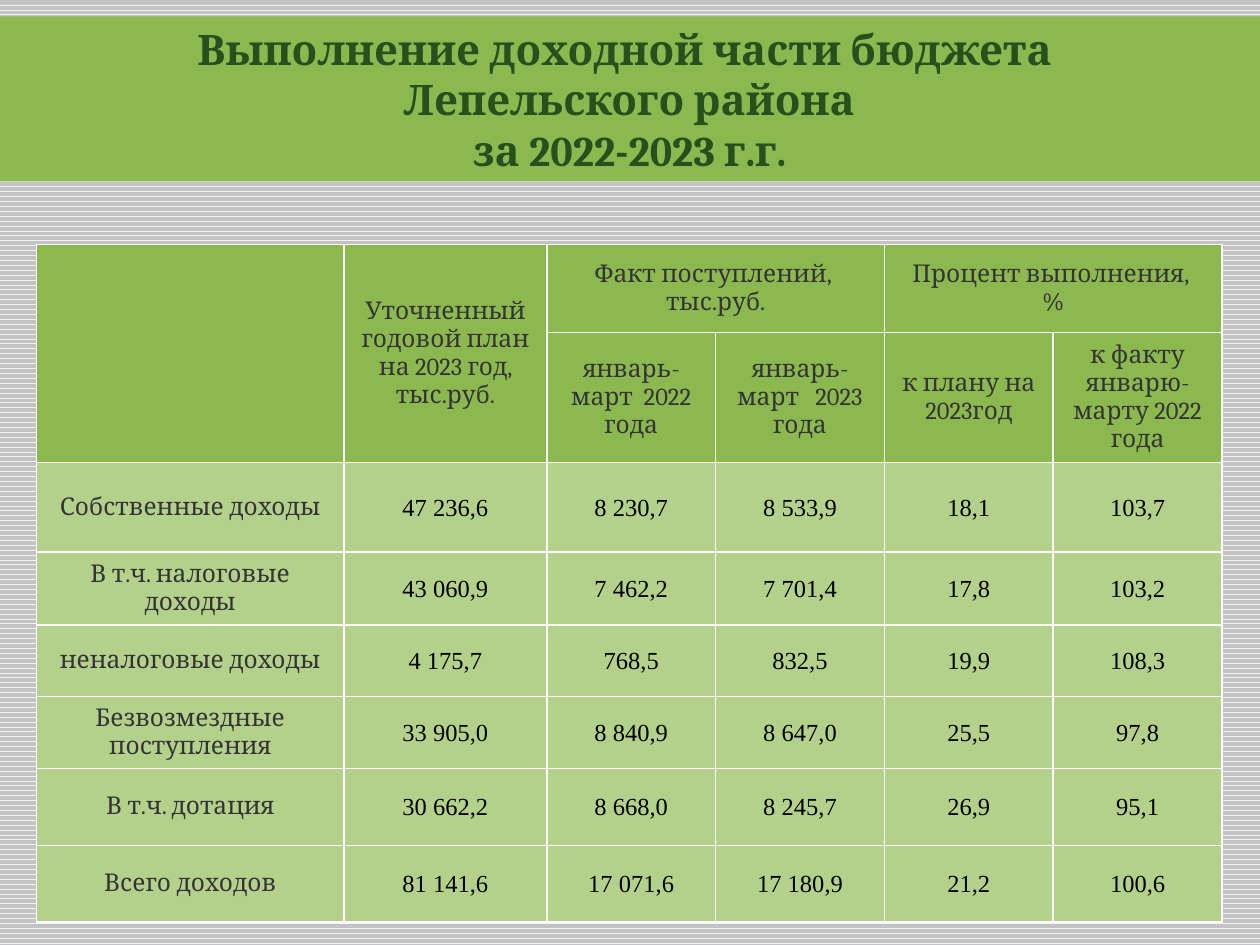
from dataclasses import dataclass

from lxml import etree
from pptx import Presentation
from pptx.dml.color import RGBColor
from pptx.enum.dml import MSO_PATTERN
from pptx.enum.text import MSO_ANCHOR, MSO_AUTO_SIZE, PP_ALIGN
from pptx.oxml.ns import qn
from pptx.util import Inches, Pt

MIDDLE = MSO_ANCHOR.MIDDLE
CENTER = PP_ALIGN.CENTER
FIXED = MSO_AUTO_SIZE.NONE
WAVE = MSO_PATTERN.WAVE

GREEN, LIGHT, WHITE = "8CB94F", "B3D18B", "FFFFFF"


@dataclass(frozen=True)
class Style:
    font: str
    size: int
    color: str
    bold: bool = False


@dataclass(frozen=True)
class Head:
    row: int
    col: int
    text: str
    rows: int = 1
    cols: int = 1


TITLE = Style("Cambria", 24, "284F1D", True)
LABEL = Style("Cambria", 14, "343436")
VALUE = Style("Times New Roman", 14, "000000")

COLS = [2.44, 1.61] + [1.34] * 4
ROWS = [0.7, 1.03, 0.71, 0.58, 0.57, 0.57, 0.61, 0.61]

HEADS = [
    Head(0, 0, "", rows=2),
    Head(0, 1, "Уточненный годовой план на 2023 год, тыс.руб.", rows=2),
    Head(0, 2, "Факт поступлений, \nтыс.руб.", cols=2),
    Head(0, 4, "Процент выполнения, \n%", cols=2),
    Head(1, 2, "январь-март  2022 года"),
    Head(1, 3, "январь-март   2023 года"),
    Head(1, 4, "к плану на 2023год"),
    Head(1, 5, "к факту январю-марту 2022 года"),
]

DATA = [
    ("Собственные доходы", "47 236,6", "8 230,7", "8 533,9", "18,1", "103,7"),
    ("В т.ч. налоговые доходы", "43 060,9", "7 462,2", "7 701,4", "17,8", "103,2"),
    ("неналоговые доходы", "4 175,7", "768,5", "832,5", "19,9", "108,3"),
    ("Безвозмездные поступления", "33 905,0", "8 840,9", "8 647,0", "25,5", "97,8"),
    ("В т.ч. дотация", "30 662,2", "8 668,0", "8 245,7", "26,9", "95,1"),
    ("Всего доходов", "81 141,6", "17 071,6", "17 180,9", "21,2", "100,6"),
]


def rgb(code: str) -> RGBColor:
    return RGBColor.from_string(code)


def paint(part, color: str) -> None:
    part.fill.solid()
    part.fill.fore_color.rgb = rgb(color)


def write(frame, text: str, style: Style) -> None:
    frame.text = text
    for para in frame.paragraphs:
        para.alignment = CENTER
        para.font.name = style.font
        para.font.size = Pt(style.size)
        para.font.bold = style.bold
        para.font.color.rgb = rgb(style.color)


def frame_cell(cell, color: str) -> None:
    """Give a cell its fill and four thin borders."""
    paint(cell, color)
    props = cell._tc.get_or_add_tcPr()
    for spot, side in enumerate(("a:lnL", "a:lnR", "a:lnT", "a:lnB")):
        line = etree.Element(qn(side), w=str(Pt(1)))
        fill = etree.SubElement(line, qn("a:solidFill"))
        etree.SubElement(fill, qn("a:srgbClr"), val=WHITE)
        props.insert(spot, line)


def fill_cell(cell, text: str, style: Style) -> None:
    write(cell.text_frame, text, style)
    cell.vertical_anchor = MIDDLE
    if style is VALUE:
        cell.margin_left = cell.margin_right = cell.margin_top = Inches(0.01)
        cell.margin_bottom = 0


def add_title(slide) -> None:
    title = slide.shapes.title
    title.left, title.top = Inches(-0.01), Inches(0.13)
    title.width, title.height = Inches(10.01), Inches(1.31)
    paint(title, GREEN)
    frame = title.text_frame
    frame.word_wrap = True
    frame.auto_size = FIXED
    frame.vertical_anchor = MIDDLE
    write(frame, "Выполнение доходной части бюджета \nЛепельского района\nза 2022-2023 г.г.", TITLE)


def add_grid(slide) -> None:
    grid = slide.shapes.add_table(
        len(ROWS), len(COLS), Inches(0.29), Inches(1.94),
        Inches(sum(COLS)), Inches(sum(ROWS))).table
    for col, width in zip(grid.columns, COLS):
        col.width = Inches(width)
    for index, height in enumerate(ROWS):
        grid.rows[index].height = Inches(height)
        for cell in grid.rows[index].cells:
            frame_cell(cell, GREEN if index < 2 else LIGHT)

    # Header cells
    for head in HEADS:
        cell = grid.cell(head.row, head.col)
        if head.rows * head.cols > 1:
            cell.merge(grid.cell(head.row + head.rows - 1, head.col + head.cols - 1))
        fill_cell(cell, head.text, LABEL)

    # Income rows
    for row, record in enumerate(DATA, start=2):
        for col, text in enumerate(record):
            fill_cell(grid.cell(row, col), text, VALUE if col else LABEL)


def main() -> None:
    deck = Presentation()
    deck.slide_width, deck.slide_height = Inches(10), Inches(7.5)
    slide = deck.slides.add_slide(deck.slide_layouts[5])

    # Patterned background
    back = slide.background.fill
    back.patterned()
    back.pattern = WAVE
    back.fore_color.rgb = rgb("F2F2F2")
    back.back_color.rgb = rgb("C3C2C5")

    add_title(slide)
    add_grid(slide)
    deck.save("out.pptx")


if __name__ == "__main__":
    main()
